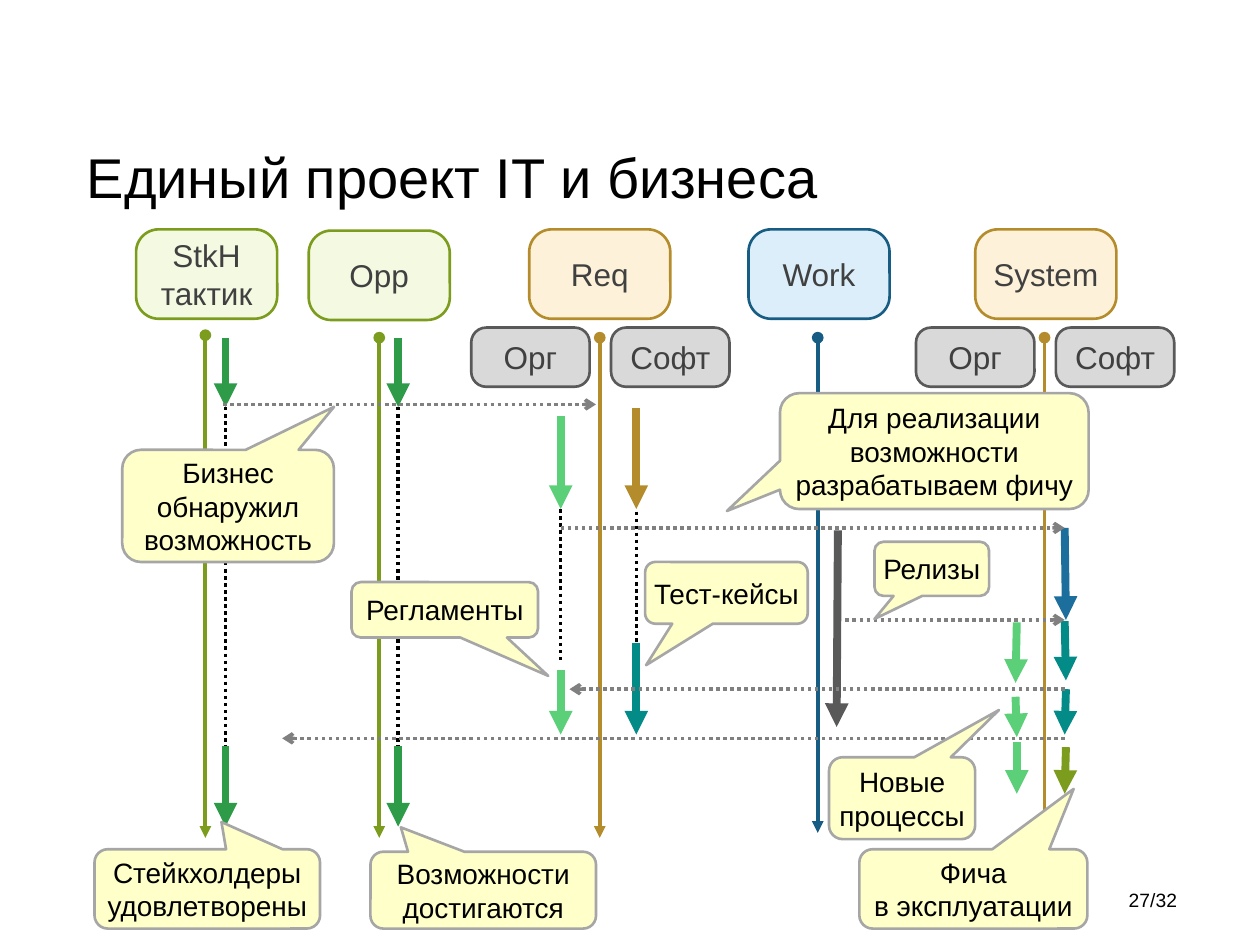
from dataclasses import dataclass

from pptx import Presentation
from pptx.dml.color import RGBColor
from pptx.enum.dml import MSO_LINE
from pptx.enum.shapes import MSO_CONNECTOR, MSO_SHAPE
from pptx.enum.text import MSO_ANCHOR, PP_ALIGN
from pptx.oxml.ns import qn
from pptx.util import Emu, Pt
from lxml.etree import SubElement

PX = 9144  # EMU per px, 100 px to the inch
FONT = "Arial"

COLORS = {
    "black": "000000", "text": "404040", "gray": "808080", "dark": "595959",
    "olive": "7C9C1E", "gold": "B48C2C", "navy": "175C83", "blue": "1C6E9C",
    "green": "2D9B47", "light": "5BD078", "teal": "038B88",
    "note": "FFFFCA", "note_line": "A6A6A6", "silver": "D9D9D9",
    "pale_olive": "F4FAE2", "pale_gold": "FDF2D9", "pale_blue": "DBEEF9",
}

# width in points, dash, head, tail
STYLES = {
    "life": (2.25, None, "oval", "triangle"),
    "step": (4.5, None, None, "triangle"),
    "wait": (2, MSO_LINE.ROUND_DOT, None, None),
    "signal": (2, MSO_LINE.ROUND_DOT, None, "arrow"),
}


@dataclass
class Line:
    x1: int
    y1: int
    x2: int
    y2: int
    style: str
    color: str


@dataclass
class Box:
    text: str
    x: int
    y: int
    w: int
    h: int
    fill: str
    line: str
    adj: tuple = (0.253,)
    size: int = 18
    color: str = "text"
    pad: tuple = (4, 0)
    kind: MSO_SHAPE = MSO_SHAPE.ROUNDED_RECTANGLE


def rgb(name: str) -> RGBColor:
    return RGBColor.from_string(COLORS[name])


def px(n: int) -> Emu:
    return Emu(n * PX)


def set_all(obj, values: dict) -> None:
    for name, value in values.items():
        setattr(obj, name, value)


def write(sp, text: str, size: int, color: str, align, pad=(10, 5)) -> None:
    tf = sp.text_frame
    set_all(tf, {
        "word_wrap": True, "vertical_anchor": MSO_ANCHOR.MIDDLE,
        "margin_left": px(pad[0]), "margin_right": px(pad[0]),
        "margin_top": px(pad[1]), "margin_bottom": px(pad[1]),
    })
    p = tf.paragraphs[0]
    set_all(p, {"text": text, "alignment": align})
    for r in p.runs:
        set_all(r.font, {"name": FONT, "size": Pt(size)})
        r.font.color.rgb = rgb(color)


def draw_label(s, x: int, y: int, w: int, h: int, text: str, size: int, align) -> None:
    sp = s.shapes.add_textbox(*map(px, (x, y, w, h)))
    write(sp, text, size, "black", align)


def draw_line(s, line: Line) -> None:
    width, dash, head, tail = STYLES[line.style]
    cxn = s.shapes.add_connector(
        MSO_CONNECTOR.STRAIGHT, *map(px, (line.x1, line.y1, line.x2, line.y2)))
    cxn.line.color.rgb = rgb(line.color)
    set_all(cxn.line, {"width": Pt(width), "dash_style": dash})
    ln = cxn.line._get_or_add_ln()
    for tag, end in (("a:headEnd", head), ("a:tailEnd", tail)):
        if end:
            SubElement(ln, qn(tag), type=end)
    SubElement(cxn._element.spPr, qn("a:effectLst"))


def draw_box(s, box: Box) -> None:
    sp = s.shapes.add_shape(box.kind, *map(px, (box.x, box.y, box.w, box.h)))
    sp.shadow.inherit = False
    for i, value in enumerate(box.adj):
        sp.adjustments[i] = value
    sp.fill.solid()
    sp.fill.fore_color.rgb = rgb(box.fill)
    sp.line.color.rgb = rgb(box.line)
    sp.line.width = Pt(1.5)
    write(sp, box.text, box.size, box.color, PP_ALIGN.CENTER, box.pad)


def note(text: str, x: int, y: int, w: int, h: int, dx: float, dy: float) -> Box:
    """A callout whose tip lies dx, dy box sizes away from its centre."""
    return Box(text, x, y, w, h, "note", "note_line", (dx, dy, 0.167), 16,
               "black", (4, 2), MSO_SHAPE.ROUNDED_RECTANGULAR_CALLOUT)


LINES = [
    # Lifelines
    Line(163, 266, 163, 665, "life", "olive"),
    Line(301, 268, 301, 665, "life", "olive"),
    Line(476, 268, 476, 665, "life", "gold"),
    Line(829, 268, 829, 665, "life", "gold"),
    Line(649, 268, 649, 661, "life", "navy"),
    # Stakeholders and opportunity: start, wait, finish
    *(Line(x, y1, x, y2, style, color) for x in (179, 316)
      for y1, y2, style, color in ((268, 323, "step", "green"),
                                   (592, 656, "step", "green"),
                                   (323, 592, "wait", "black"))),
    # Requirements
    Line(505, 324, 505, 404, "step", "gold"),
    Line(505, 510, 505, 583, "step", "teal"),
    Line(505, 406, 505, 510, "wait", "black"),
    Line(445, 330, 445, 404, "step", "light"),
    Line(445, 532, 445, 583, "step", "light"),
    Line(445, 404, 445, 525, "wait", "black"),
    # Work
    Line(665, 421, 664, 577, "step", "dark"),
    # System
    Line(845, 419, 846, 492, "step", "blue"),
    Line(845, 493, 846, 540, "step", "teal"),
    Line(846, 547, 845, 583, "step", "teal"),
    Line(846, 593, 845, 630, "step", "olive"),
    Line(807, 494, 806, 542, "step", "light"),
    Line(806, 553, 807, 585, "step", "light"),
    Line(807, 589, 807, 630, "step", "light"),
    # Signals between lifelines
    *(Line(x1, y, x2, y, "signal", "gray") for x1, x2, y in (
        (177, 473, 321), (445, 845, 419), (671, 845, 492),
        (845, 224, 586), (845, 452, 547))),
]

NOTES = [
    note("Бизнес обнаружил возможность", 97, 357, 168, 89, 0.501, -0.884),
    note("Возможности достигаются", 294, 676, 179, 61, -0.365, -0.818),
    note("Стейкхолдеры удовлетворены", 75, 674, 179, 63, 0.063, -0.843),
    note("Фича\vв эксплуатации", 682, 674, 181, 63, 0.44, -1.261),
    note("Для реализации возможности разрабатываем фичу",
         619, 312, 245, 92, -0.672, 0.517),
    note("Релизы", 694, 430, 91, 43, -0.5, 0.926),
    note("Тест-кейсы", 512, 446, 129, 49, -0.494, 1.172),
    note("Регламенты", 279, 462, 148, 44, 0.555, 1.192),
    note("Новые процессы", 658, 601, 116, 65, 0.663, -1.077),
]

# Each split column has an organisation and a software part
PARTS = [
    Box(text, left + shift, 260, 94, 47, "silver", "dark", pad=(10, 5))
    for left in (374, 727) for text, shift in (("Орг", 0), ("Софт", 111))
]

HEADERS = [
    Box(text, x, y, 112, 71, fill, line) for text, x, y, fill, line in (
        ("StkH тактик", 108, 182, "pale_olive", "olive"),
        ("Opp", 245, 183, "pale_olive", "olive"),
        ("Req", 420, 182, "pale_gold", "gold"),
        ("Work", 594, 182, "pale_blue", "navy"),
        ("System", 774, 182, "pale_gold", "gold"))
]


def main() -> None:
    prs = Presentation()
    set_all(prs, {"slide_width": px(1000), "slide_height": px(750)})
    s = prs.slides.add_slide(prs.slide_layouts[6])
    draw_label(s, 59, 99, 850, 82, "Единый проект IT и бизнеса", 32, PP_ALIGN.LEFT)
    for line in LINES:
        draw_line(s, line)
    for box in NOTES + PARTS + HEADERS:
        draw_box(s, box)
    draw_label(s, 865, 697, 79, 34, "27/32", 11, PP_ALIGN.RIGHT)
    prs.save("out.pptx")


if __name__ == "__main__":
    main()
